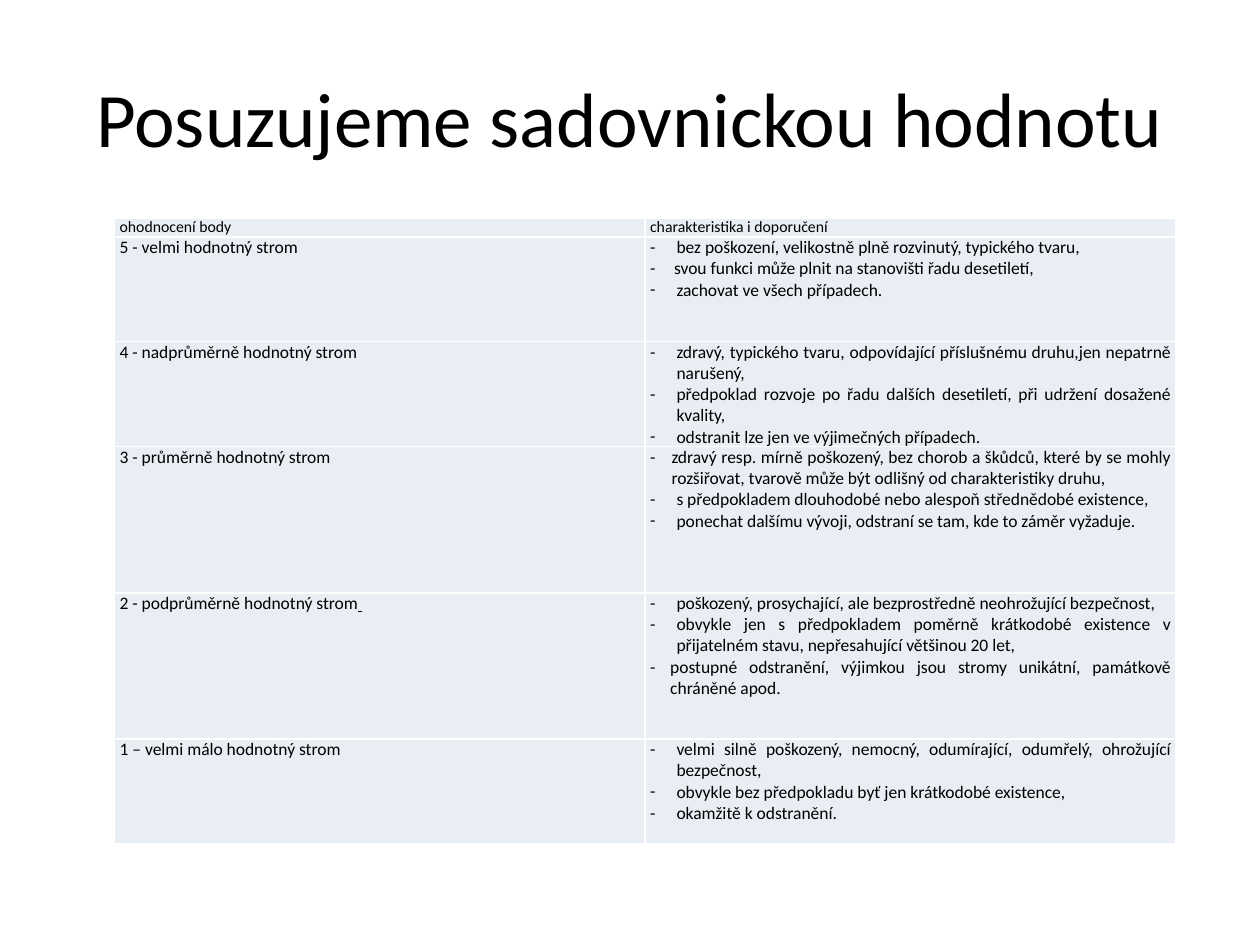
from lxml import etree
from pptx import Presentation, util as u
from pptx.dml.color import RGBColor
from pptx.enum import text
from pptx.oxml.ns import qn

BLACK, WHITE, PALE_BLUE = "000000", "FFFFFF", "E9EDF4"
INDENT = 0.21

ROW_HEIGHTS = [0.15, 0.83, 0.83, 1.16, 1.16, 0.83]
HEADINGS = ["ohodnocení body", "charakteristika i doporučení"]
RATINGS = [
    ("5 - velmi hodnotný strom", [
        ("bez poškození, velikostně plně rozvinutý, typického tvaru,", INDENT),
        ("svou funkci může plnit na stanovišti řadu desetiletí,", 0.19),
        ("zachovat ve všech případech.", INDENT),
    ]),
    ("4 - nadprůměrně hodnotný strom", [
        ("zdravý, typického tvaru, odpovídající příslušnému druhu,jen nepatrně narušený,", INDENT),
        ("předpoklad rozvoje po řadu dalších desetiletí, při udržení dosažené kvality,", INDENT),
        ("odstranit lze jen ve výjimečných případech.", INDENT),
    ]),
    ("3 - průměrně hodnotný strom", [
        ("zdravý resp. mírně poškozený, bez chorob a škůdců, které by se mohly "
         "rozšiřovat, tvarově může být odlišný od charakteristiky druhu,", 0.17),
        ("s předpokladem dlouhodobé nebo alespoň střednědobé existence,", INDENT),
        ("ponechat dalšímu vývoji, odstraní se tam, kde to záměr vyžaduje.", INDENT),
    ]),
    ("2 - podprůměrně hodnotný strom", [
        ("poškozený, prosychající, ale bezprostředně neohrožující bezpečnost,", INDENT),
        ("obvykle jen s předpokladem poměrně krátkodobé existence "
         "v přijatelném stavu, nepřesahující většinou 20 let,", INDENT),
        ("postupné odstranění, výjimkou jsou stromy unikátní, památkově\nchráněné apod.", 0.16),
    ]),
    ("1 – velmi málo hodnotný strom", [
        ("velmi silně poškozený, nemocný, odumírající, odumřelý, ohrožující bezpečnost,", INDENT),
        ("obvykle bez předpokladu byť jen krátkodobé existence,", INDENT),
        ("okamžitě k odstranění.", INDENT),
    ]),
]


def color(value):
    return RGBColor.from_string(value)


class SlideBuilder:
    font = "Calibri"

    def __init__(self, slide):
        self.slide = slide

    def run(self, paragraph, content, size):
        for index, line in enumerate(content.split("\n")):
            if index:
                paragraph.add_line_break()
            run = paragraph.add_run()
            run.text = line
            run.font.name = self.font
            run.font.size = u.Pt(size)
            run.font.color.rgb = color(BLACK)
        return run

    def title(self, content, left, top, width, height):
        box = self.slide.shapes.add_textbox(*map(u.Inches, (left, top, width, height)))
        frame = box.text_frame
        frame.word_wrap = True
        frame.vertical_anchor = text.MSO_ANCHOR.MIDDLE
        frame.paragraphs[0].alignment = text.PP_ALIGN.CENTER
        self.run(frame.paragraphs[0], content, 44)

    def table(self, left, top, width, heights):
        area = map(u.Inches, (left, top, width, sum(heights)))
        table = self.slide.shapes.add_table(len(heights), 2, *area).table
        for row, height in zip(table.rows, heights):
            row.height = u.Inches(height)
        for cell in table.iter_cells():
            cell.margin_left = cell.margin_right = u.Inches(0.04)
            cell.margin_top = cell.margin_bottom = 0
            self.borders(cell)
            cell.fill.solid()
            cell.fill.fore_color.rgb = color(PALE_BLUE)
        return table

    def borders(self, cell):
        properties = cell._tc.get_or_add_tcPr()
        for side in ("a:lnL", "a:lnR", "a:lnT", "a:lnB"):
            line = etree.SubElement(properties, qn(side), w=str(u.Pt(1)))
            fill = etree.SubElement(line, qn("a:solidFill"))
            etree.SubElement(fill, qn("a:srgbClr"), val=WHITE)

    def cell_text(self, cell, content, size):
        paragraph = cell.text_frame.paragraphs[0]
        paragraph.alignment = text.PP_ALIGN.JUSTIFY
        return self.run(paragraph, content, size)

    def cell_list(self, cell, items):
        frame = cell.text_frame
        for index, (content, indent) in enumerate(items):
            paragraph = frame.add_paragraph() if index else frame.paragraphs[0]
            paragraph.alignment = text.PP_ALIGN.JUSTIFY
            properties = paragraph._p.get_or_add_pPr()
            properties.set("marL", str(u.Inches(indent)))
            properties.set("indent", str(-u.Inches(indent)))
            etree.SubElement(properties, qn("a:buFont"), typeface=self.font)
            etree.SubElement(properties, qn("a:buChar"), char="-")
            self.run(paragraph, content, 10)


def main():
    presentation = Presentation()
    presentation.slide_width = u.Inches(10)
    presentation.slide_height = u.Inches(7.5)
    builder = SlideBuilder(presentation.slides.add_slide(presentation.slide_layouts[6]))

    builder.title("Posuzujeme sadovnickou hodnotu", 0.5, 0.3, 9, 1.25)
    table = builder.table(0.91, 1.73, 8.42, ROW_HEIGHTS)
    for column, heading in enumerate(HEADINGS):
        builder.cell_text(table.cell(0, column), heading, 9)
    for row, (rating, items) in enumerate(RATINGS, start=1):
        builder.cell_text(table.cell(row, 0), rating, 10)
        builder.cell_list(table.cell(row, 1), items)
    underlined = builder.cell_text(table.cell(4, 0), " ", 10)
    underlined.font.underline = True

    presentation.save("out.pptx")


if __name__ == "__main__":
    main()
